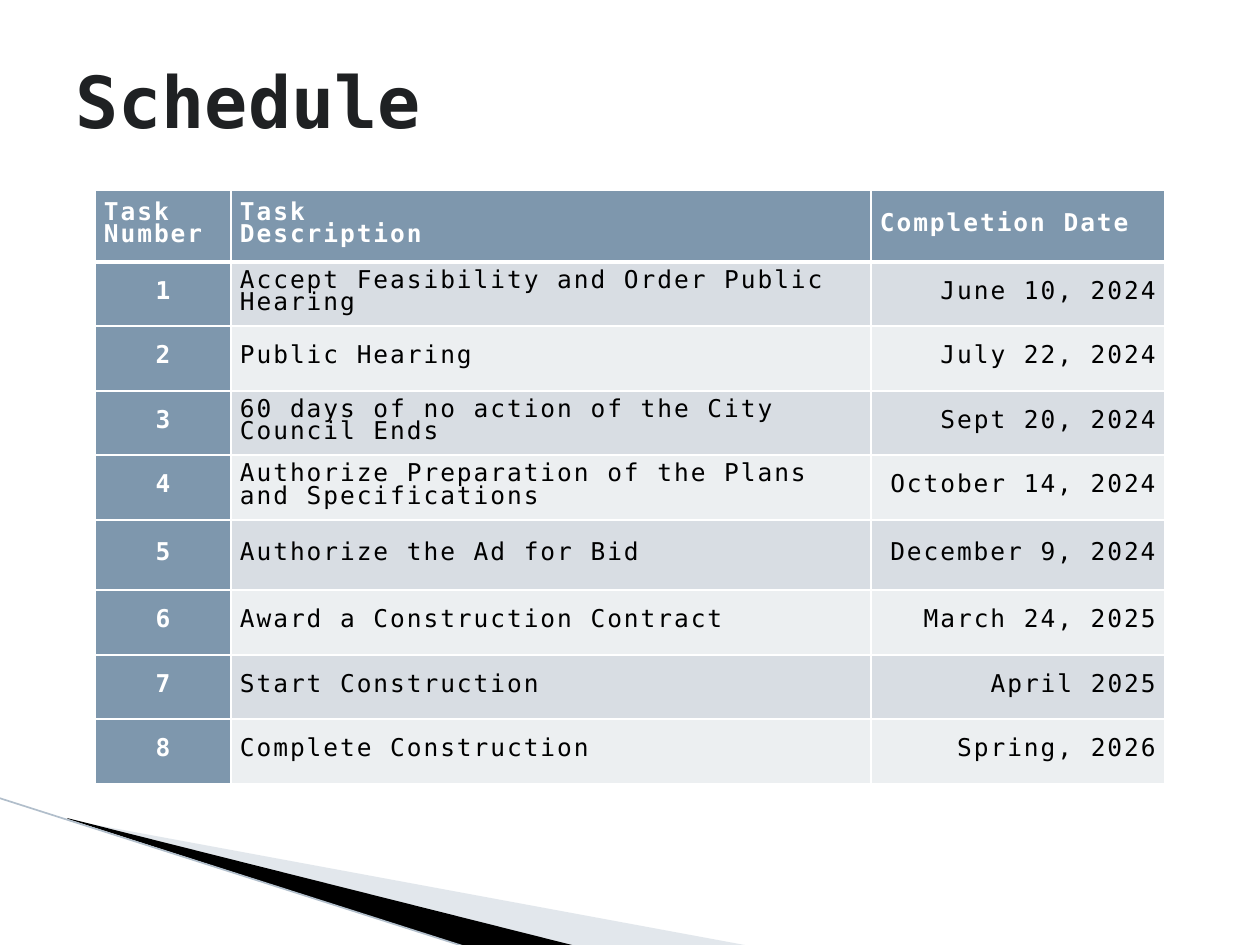
from lxml.etree import SubElement
from pptx import Presentation
from pptx.dml.color import RGBColor
from pptx.enum.shapes import MSO_CONNECTOR as Connector
from pptx.enum.text import MSO_ANCHOR as Anchor, PP_ALIGN as Align
from pptx.oxml import parse_xml
from pptx.oxml.ns import nsdecls, qn
from pptx.util import Emu, Pt

PX = 914400 / 126
FONT = "DejaVu Sans Mono"
COLORS = {
    "title": "1F2123", "text": "000000", "white": "FFFFFF", "accent": "7E97AD",
    "odd": "D8DDE3", "even": "ECEFF1", "wedge": "B7C4D0", "edge": "B1BECB",
}
HEADER = ("Task Number", "Task\nDescription", "Completion Date")
TASKS = [
    ("Accept Feasibility and Order Public Hearing", "June 10, 2024"),
    ("Public Hearing", "July 22, 2024"),
    ("60 days of no action of the City Council Ends", "Sept 20, 2024"),
    ("Authorize Preparation of the Plans and Specifications", "October 14, 2024"),
    ("Authorize the Ad for Bid", "December 9, 2024"),
    ("Award a Construction Contract", "March 24, 2025"),
    ("Start Construction", "April 2025"),
    ("Complete Construction", "Spring, 2026"),
]
COLUMN_WIDTHS = (136, 640, 294)
ROW_HEIGHTS = (72, 64, 65, 64, 65, 70, 65, 64, 65)
COLUMN_ALIGNS = (Align.CENTER, Align.LEFT, Align.RIGHT)


def px(value):
    """Turn pixels into EMU."""
    return Emu(round(value * PX))


def rgb(name):
    """Look up a named colour."""
    return RGBColor.from_string(COLORS[name])


def add_run(paragraph, text, size, color, bold):
    """Add one formatted run and return it."""
    run = paragraph.add_run()
    run.text = text
    run.font.name = FONT
    run.font.size = Pt(size)
    run.font.bold = bold
    run.font.color.rgb = rgb(color)
    return run


def add_wedge(slide, points, left, top, color, opacity=100):
    """Draw a filled polygon relative to a corner."""
    corners = [(px(left + x), px(top + y)) for x, y in points]
    builder = slide.shapes.build_freeform(*corners[0])
    builder.add_line_segments(corners[1:], close=True)
    shape = builder.convert_to_shape()
    shape.shadow.inherit = False
    shape.fill.solid()
    shape.fill.fore_color.rgb = rgb(color)
    shape.line.fill.background()
    if opacity < 100:
        fill_color = shape.fill._xPr.find(qn("a:solidFill"))[0]
        SubElement(fill_color, qn("a:alpha"), val=str(opacity * 1000))


def add_corner_decoration(slide, left, top):
    """Draw the two wedges and the thin edge in the lower corner."""
    add_wedge(slide, [(69, 22), (750, 148), (575, 148), (69, 21)], left, top, "wedge", 40)
    add_wedge(slide, [(67, 20), (576, 148), (469, 150), (68, 21)], left, top, "text")
    edge = slide.shapes.add_connector(
        Connector.STRAIGHT, px(left - 1), px(top), px(left + 469), px(top + 150))
    edge.line.color.rgb = rgb("edge")
    edge.line.width = Pt(0.95)
    SubElement(edge._element.spPr, qn("a:effectLst"))


def add_title(slide, left, top, width, height):
    """Place the slide title."""
    frame = slide.shapes.add_textbox(px(left), px(top), px(width), px(height)).text_frame
    frame.word_wrap = True
    frame.vertical_anchor = Anchor.MIDDLE
    add_run(frame.paragraphs[0], "Schedule", 41, "title", True)


def set_borders(cell, top, bottom):
    """Give a cell white borders, with the top and bottom widths in points."""
    properties = cell._tc.get_or_add_tcPr()
    widths = {"lnL": 1, "lnR": 1, "lnT": top, "lnB": bottom}
    for index, (tag, width) in enumerate(widths.items()):
        properties.insert(index, parse_xml(
            f'<a:{tag} {nsdecls("a")} w="{Pt(width)}"><a:solidFill>'
            f'<a:srgbClr val="{COLORS["white"]}"/></a:solidFill></a:{tag}>'))


def fill_cell(cell, text, fill, color, bold, align):
    """Write and format one table cell."""
    cell.fill.solid()
    cell.fill.fore_color.rgb = rgb(fill)
    cell.vertical_anchor = Anchor.MIDDLE
    cell.margin_left = cell.margin_right = px(9)
    cell.margin_top = cell.margin_bottom = 0
    frame = cell.text_frame
    for index, line in enumerate(text.split("\n")):
        paragraph = frame.add_paragraph() if index else frame.paragraphs[0]
        paragraph.alignment = align
        paragraph.line_spacing = Pt(13)
        run = add_run(paragraph, line, 14, color, bold)
        run.font._element.set("spc", "110")


def add_schedule(slide, left, top):
    """Place the schedule table."""
    rows = [HEADER] + [(str(number), *task) for number, task in enumerate(TASKS, 1)]
    table = slide.shapes.add_table(
        len(rows), len(HEADER), px(left), px(top),
        px(sum(COLUMN_WIDTHS)), px(sum(ROW_HEIGHTS))).table
    table.horz_banding = False
    table.first_row = False
    for column, width in zip(table.columns, COLUMN_WIDTHS):
        column.width = px(width)
    for row_index, (values, height) in enumerate(zip(rows, ROW_HEIGHTS)):
        table.rows[row_index].height = px(height)
        for column_index, value in enumerate(values):
            cell = table.cell(row_index, column_index)
            heading = row_index == 0 or column_index == 0
            band = "odd" if row_index % 2 else "even"
            align = COLUMN_ALIGNS[column_index] if row_index else Align.LEFT
            fill_cell(cell, value, "accent" if heading else band,
                      "white" if heading else "text", heading, align)
            set_borders(cell, 3 if row_index == 1 else 1, 3 if row_index == 0 else 1)


def main():
    """Build and save the schedule slide."""
    presentation = Presentation()
    presentation.slide_width, presentation.slide_height = px(1260), px(945)
    slide = presentation.slides.add_slide(presentation.slide_layouts[6])
    add_corner_decoration(slide, 0, 798)
    add_schedule(slide, 95, 190)
    add_title(slide, 63, 21, 1134, 158)
    presentation.save("out.pptx")


if __name__ == "__main__":
    main()
